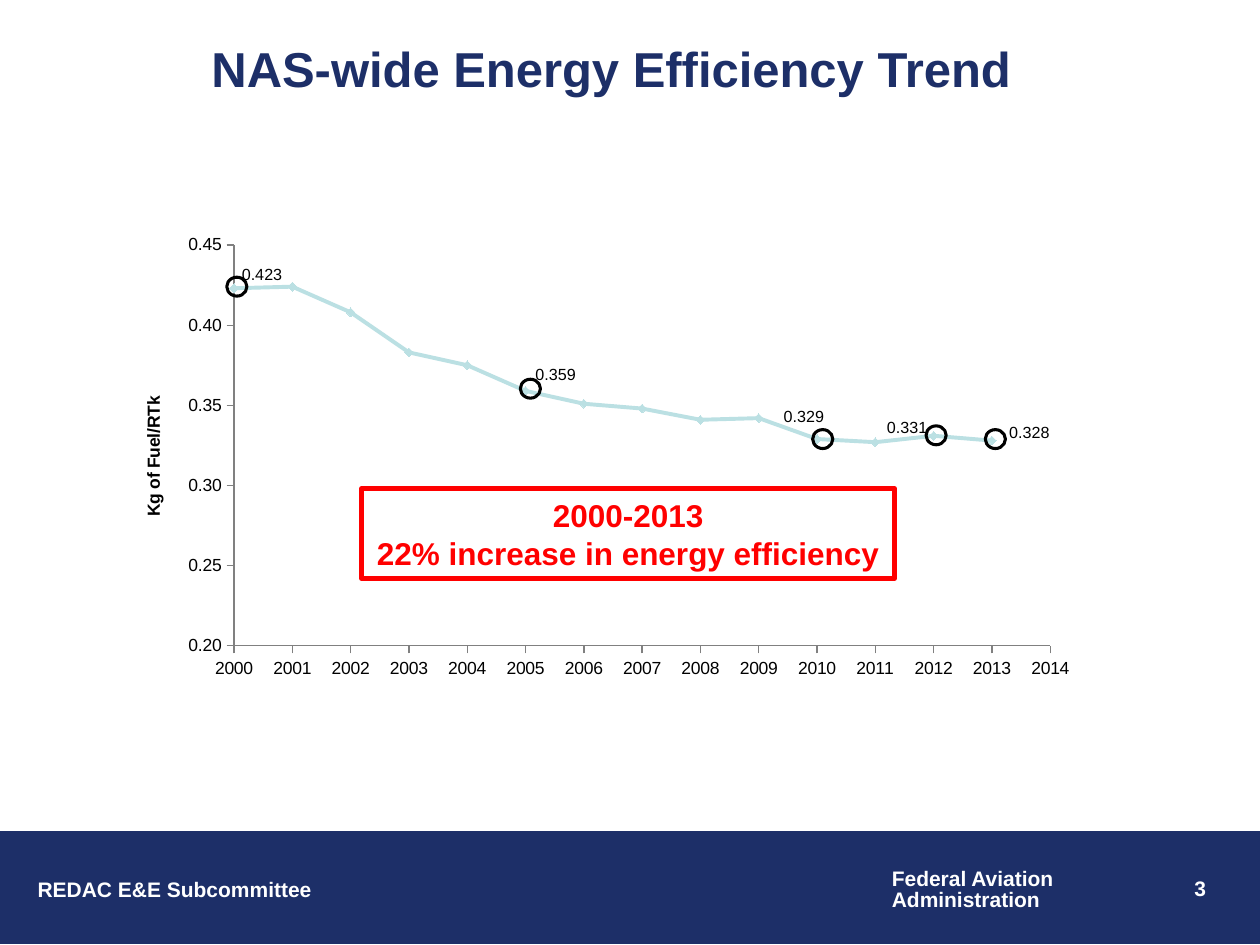
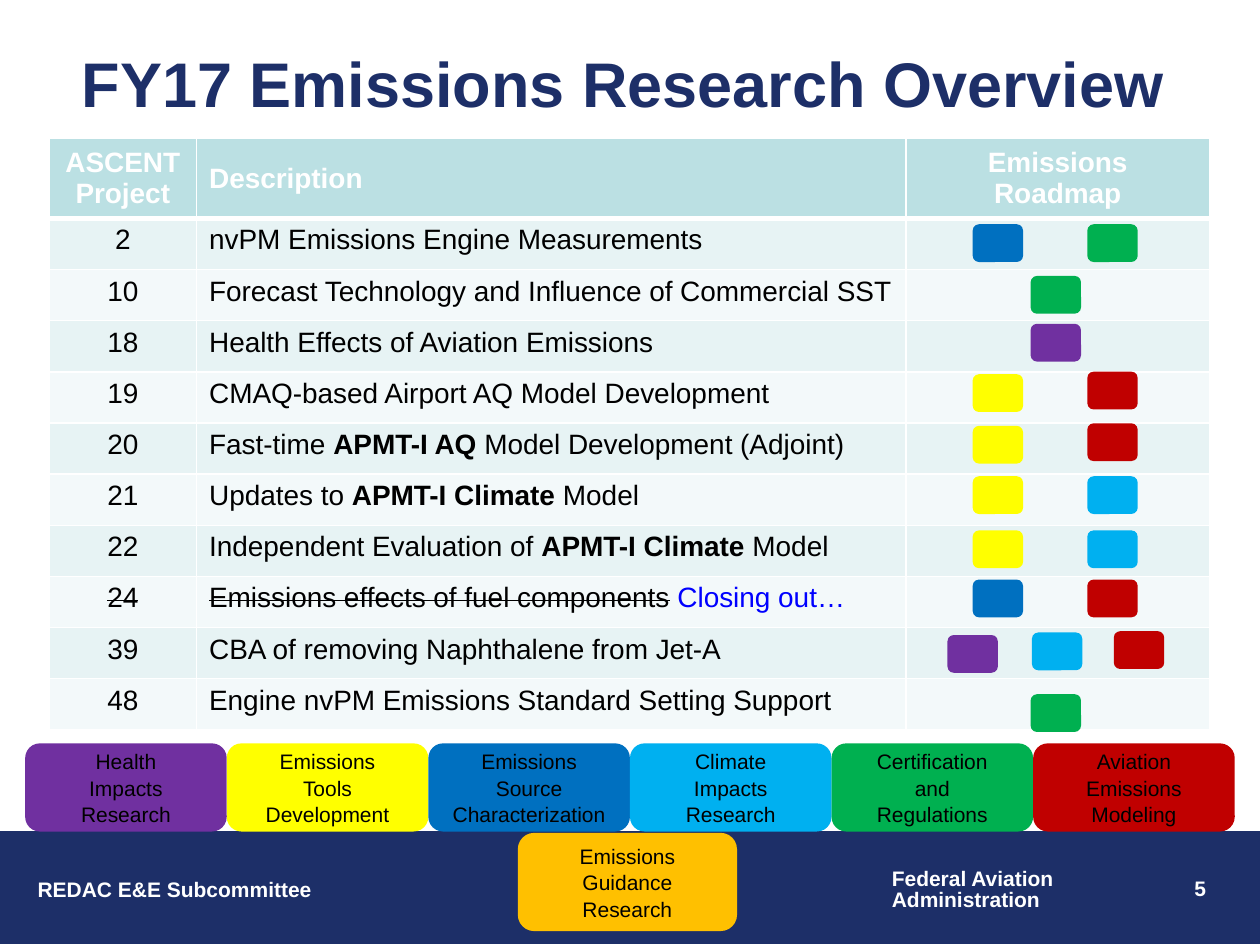
from lxml import etree
from pptx import Presentation
from pptx import util as u
from pptx.chart.data import XyChartData
from pptx.dml.color import RGBColor
from pptx.enum import chart as ch, shapes, text
from pptx.oxml import parse_xml
from pptx.oxml.ns import nsdecls, qn

COLORS = {
    "navy": "1D2F68", "white": "FFFFFF", "black": "000000", "red": "FF0000",
    "link": "0000FF", "gray": "808080", "teal": "BBE0E3", "band1": "E7F3F4",
    "band2": "F3F9FA", "purple": "7030A0", "yellow": "FFFF00", "blue": "0070C0",
    "sky": "00B0F0", "green": "00B050", "crimson": "C00000", "amber": "FFC000",
}
LEFT, CENTER, RIGHT = text.PP_ALIGN.LEFT, text.PP_ALIGN.CENTER, text.PP_ALIGN.RIGHT
TOP, MIDDLE = text.MSO_ANCHOR.TOP, text.MSO_ANCHOR.MIDDLE


def rgb(name):
    return RGBColor.from_string(COLORS[name])


def box(at):
    return [u.Inches(v) for v in at]


class Deck:
    """Holds the style and the current slide."""

    def __init__(self):
        self.prs = Presentation()
        self.prs.slide_width, self.prs.slide_height = u.Inches(10), u.Inches(7.5)
        self.s = None

    def style(self, font, color="black", strike=False, **fmt):
        for key, value in {"name": "Arial", "bold": False, **fmt}.items():
            setattr(font, key, u.Pt(value) if key == "size" else value)
        font.color.rgb = rgb(color)

    def fill_text(self, tf, lines, align=LEFT, anchor=TOP, spacing=None, wrap=True, **fmt):
        """Each line is a string or a list of (text, format) runs."""
        tf.word_wrap, tf.vertical_anchor = wrap, anchor
        for i, line in enumerate(lines):
            p = tf.add_paragraph() if i else tf.paragraphs[0]
            p.alignment = align
            if spacing:
                p.line_spacing = spacing
            for words, extra in [(line, {})] if isinstance(line, str) else line:
                r = p.add_run()
                r.text = words
                self.style(r.font, **{**fmt, **extra})
                if extra.get("strike"):
                    r._r.get_or_add_rPr().set("strike", "sngStrike")

    def text(self, at, lines, **fmt):
        sp = self.s.shapes.add_textbox(*box(at))
        self.fill_text(sp.text_frame, lines, **fmt)

    def shape(self, kind, at, fill=None, line=None, width=1):
        sp = self.s.shapes.add_shape(kind, *box(at))
        sp.shadow.inherit = False
        if fill:
            sp.fill.solid()
            sp.fill.fore_color.rgb = rgb(fill)
        else:
            sp.fill.background()
        if line:
            sp.line.color.rgb = rgb(line)
            sp.line.width = u.Pt(width)
        else:
            sp.line.fill.background()
        return sp

    def slide(self, title, at, size, number):
        self.s = self.prs.slides.add_slide(self.prs.slide_layouts[6])
        # Footer band
        self.shape(shapes.MSO_SHAPE.RECTANGLE, (0, 6.6, 10, 0.89), "navy", "navy", 0.75)
        foot = {"size": 12, "bold": True, "color": "white"}
        self.text((7.59, 6.9, 2.08, 0.5), [number], align=RIGHT, **foot)
        self.text((6.98, 6.85, 1.5, 0.44), ["Federal Aviation", "Administration"],
                  spacing=0.85, wrap=False, **foot)
        self.text((0.2, 6.91, 4.09, 0.3), ["REDAC E&E Subcommittee"], **foot)
        # Title
        self.text(at, [title], align=CENTER, anchor=MIDDLE, size=size, bold=True, color="navy")

    def line_chart(self, at, xs, ys, axis_title, plot):
        data = XyChartData()
        points = data.add_series("Series 1")
        for x, y in zip(xs, ys):
            points.add_data_point(x, y)
        chart = self.s.shapes.add_chart(ch.XL_CHART_TYPE.XY_SCATTER_LINES, *box(at), data).chart
        chart.has_legend = chart.has_title = False
        self.style(chart.font, size=10)
        chart.plots[0].vary_by_categories = False
        # Series
        ser = chart.plots[0].series[0]
        ser.smooth = False
        ser.format.line.color.rgb = rgb("teal")
        ser.format.line.width = u.Pt(2.25)
        ser.marker.style, ser.marker.size = ch.XL_MARKER_STYLE.DIAMOND, 5
        ser.marker.format.fill.solid()
        ser.marker.format.fill.fore_color.rgb = rgb("teal")
        ser.marker.format.line.color.rgb = rgb("teal")
        # Axes
        for axis, low, high, step, fmt in ((chart.category_axis, 2000, 2014, 1, "0"),
                                           (chart.value_axis, 0.2, 0.45, 0.05, "0.00")):
            values = {"minimum_scale": low, "maximum_scale": high, "major_unit": step,
                      "has_major_gridlines": False,
                      "major_tick_mark": ch.XL_TICK_MARK.OUTSIDE,
                      "minor_tick_mark": ch.XL_TICK_MARK.NONE}
            for key, value in values.items():
                setattr(axis, key, value)
            axis.tick_labels.number_format = fmt
            axis.tick_labels.number_format_is_linked = False
            axis.format.line.color.rgb = rgb("gray")
        chart.value_axis.has_title = True
        self.fill_text(chart.value_axis.axis_title.text_frame, [axis_title], size=10, bold=True)
        # Inner plot area
        area = chart.plots[0]._element.getparent()
        for old in area.findall(qn("c:layout")):
            area.remove(old)
        marks = [("layoutTarget", "inner"), ("xMode", "edge"), ("yMode", "edge")]
        marks += zip("xywh", plot)
        inner = "".join(f'<c:{tag} val="{val}"/>' for tag, val in marks)
        area.insert(0, parse_xml(f'<c:layout {nsdecls("c")}><c:manualLayout>{inner}'
                                 '</c:manualLayout></c:layout>'))

    def cell(self, cell, lines, fill, borders, **fmt):
        tcPr = cell._tc.get_or_add_tcPr()
        for side, width in zip("LRTB", borders):
            ln = etree.SubElement(tcPr, qn(f"a:ln{side}"), w=str(u.Pt(width)))
            solid = etree.SubElement(ln, qn("a:solidFill"))
            etree.SubElement(solid, qn("a:srgbClr"), val=COLORS["white"])
        cell.fill.solid()
        cell.fill.fore_color.rgb = rgb(fill)
        anchor = fmt.pop("anchor", TOP)
        self.fill_text(cell.text_frame, lines, size=16, **fmt)
        cell.vertical_anchor = anchor

    def table(self, at, widths, heights, header, rows):
        tbl = self.s.shapes.add_table(len(heights), len(widths), *box(at)).table
        for col, w in zip(tbl.columns, widths):
            col.width = u.Inches(w)
        for row, h in zip(tbl.rows, heights):
            row.height = u.Inches(h)
        aligns = (CENTER, LEFT, CENTER)
        for c, align in enumerate(aligns):
            self.cell(tbl.cell(0, c), header[c], "teal", (1, 1, 1, 3), align=align,
                      anchor=MIDDLE, bold=True, color="white")
            for i, row in enumerate(rows, 1):
                self.cell(tbl.cell(i, c), [row[c]], "band1" if i % 2 else "band2",
                          (1, 1, 3 if i == 1 else 1, 1), align=align)

    def topic(self, at, fill, lines):
        sp = self.shape(shapes.MSO_SHAPE.ROUNDED_RECTANGLE, at, fill)
        self.fill_text(sp.text_frame, lines, align=CENTER, anchor=MIDDLE, spacing=1.05, size=12)


def efficiency_slide(d):
    d.slide("NAS-wide Energy Efficiency Trend", (0.54, 0.04, 8.62, 1), 28, "3")
    fuel = [0.423, 0.424, 0.408, 0.383, 0.375, 0.359, 0.351,
            0.348, 0.341, 0.342, 0.329, 0.327, 0.331, 0.328]
    d.line_chart((1.04, 1.75, 7.64, 3.82), range(2000, 2014), fuel, "Kg of Fuel/RTk",
                 (0.107, 0.051, 0.848, 0.833))

    # Circled years: circle left and top, label left and top
    for year, cx, cy, lx, ly in ((2000, 1.8, 2.2, 1.75, 2.05), (2005, 4.13, 3.01, 4.08, 2.84),
                                 (2010, 6.45, 3.41, 6.05, 3.18), (2012, 7.35, 3.38, 6.87, 3.26),
                                 (2013, 7.82, 3.41, 7.84, 3.3)):
        d.shape(shapes.MSO_SHAPE.FLOWCHART_CONNECTOR, (cx, cy, 0.16, 0.15), line="black", width=1.75)
        d.text((lx, ly, 0.66, 0.26), [f"{fuel[year - 2000]:.3f}"], align=CENTER, size=9.2)

    # Key result
    sp = d.shape(shapes.MSO_SHAPE.RECTANGLE, (2.87, 3.88, 4.23, 0.71), line="red", width=3)
    d.fill_text(sp.text_frame, ["2000-2013", "22% increase in energy efficiency"], align=CENTER,
                anchor=MIDDLE, wrap=False, size=18, bold=True, color="red")


def emissions_slide(d):
    d.slide("FY17 Emissions Research Overview", (0.31, 0.32, 9.27, 0.67), 36, "5")
    bold, strike = {"bold": True}, {"strike": True}
    climate = ("APMT-I Climate", bold)
    # Project, description, roadmap chips as (colour, top)
    projects = [
        ("2", "nvPM Emissions Engine Measurements", [("blue", 1.78), ("green", 1.78)]),
        ("10", "Forecast Technology and Influence of Commercial SST", [("green", 2.19)]),
        ("18", "Health Effects of Aviation Emissions", [("purple", 2.57)]),
        ("19", "CMAQ-based Airport AQ Model Development", [("yellow", 2.97), ("crimson", 2.95)]),
        ("20", [("Fast-time ", {}), ("APMT-I AQ", bold), (" Model Development (Adjoint)", {})],
         [("yellow", 3.38), ("crimson", 3.36)]),
        ("21", [("Updates to ", {}), climate, (" Model", {})], [("yellow", 3.78), ("sky", 3.78)]),
        ("22", [("Independent Evaluation of ", {}), climate, (" Model", {})],
         [("yellow", 4.21), ("sky", 4.21)]),
        ([("24", strike)], [("Emissions effects of fuel components", strike),
                            (" Closing out…", {"color": "link"})],
         [("blue", 4.6), ("crimson", 4.6)]),
        ("39", "CBA of removing Naphthalene from Jet-A",
         [("purple", 5.04), ("sky", 5.02), ("crimson", 5.01)]),
        ("48", "Engine nvPM Emissions Standard Setting Support", [("green", 5.51)]),
    ]
    d.table((0.39, 1.1, 9.21, 4.66), (1.17, 5.63, 2.41), [0.6] + [0.406] * len(projects),
            (["ASCENT", "Project"], ["Description"], ["Emissions", "Roadmap"]),
            [(number, words, "") for number, words, _ in projects])

    # Roadmap chips, placed by how many a row holds
    lefts = {1: [8.18], 2: [7.72, 8.63], 3: [7.52, 8.19, 8.84]}
    for _, _, chips in projects:
        for x, (color, y) in zip(lefts[len(chips)], chips):
            d.shape(shapes.MSO_SHAPE.ROUNDED_RECTANGLE, (x, y, 0.4, 0.3), color)

    # Roadmap topics
    topics = [("purple", ["Health", "Impacts", "Research"]),
              ("yellow", ["Emissions", "Tools", "Development"]),
              ("blue", ["Emissions", "Source", "Characterization"]),
              ("sky", ["Climate", "Impacts", "Research"]),
              ("green", ["Certification", "and", "Regulations"]),
              ("crimson", ["Aviation", "Emissions", "Modeling"])]
    for i, (color, lines) in enumerate(topics):
        d.topic((0.2 + 1.6 * i, 5.9, 1.6, 0.7), color, lines)
    d.topic((4.11, 6.61, 1.74, 0.78), "amber", ["Emissions", "Guidance", "Research"])


def main():
    d = Deck()
    efficiency_slide(d)
    emissions_slide(d)
    d.prs.save("out.pptx")


if __name__ == "__main__":
    main()
